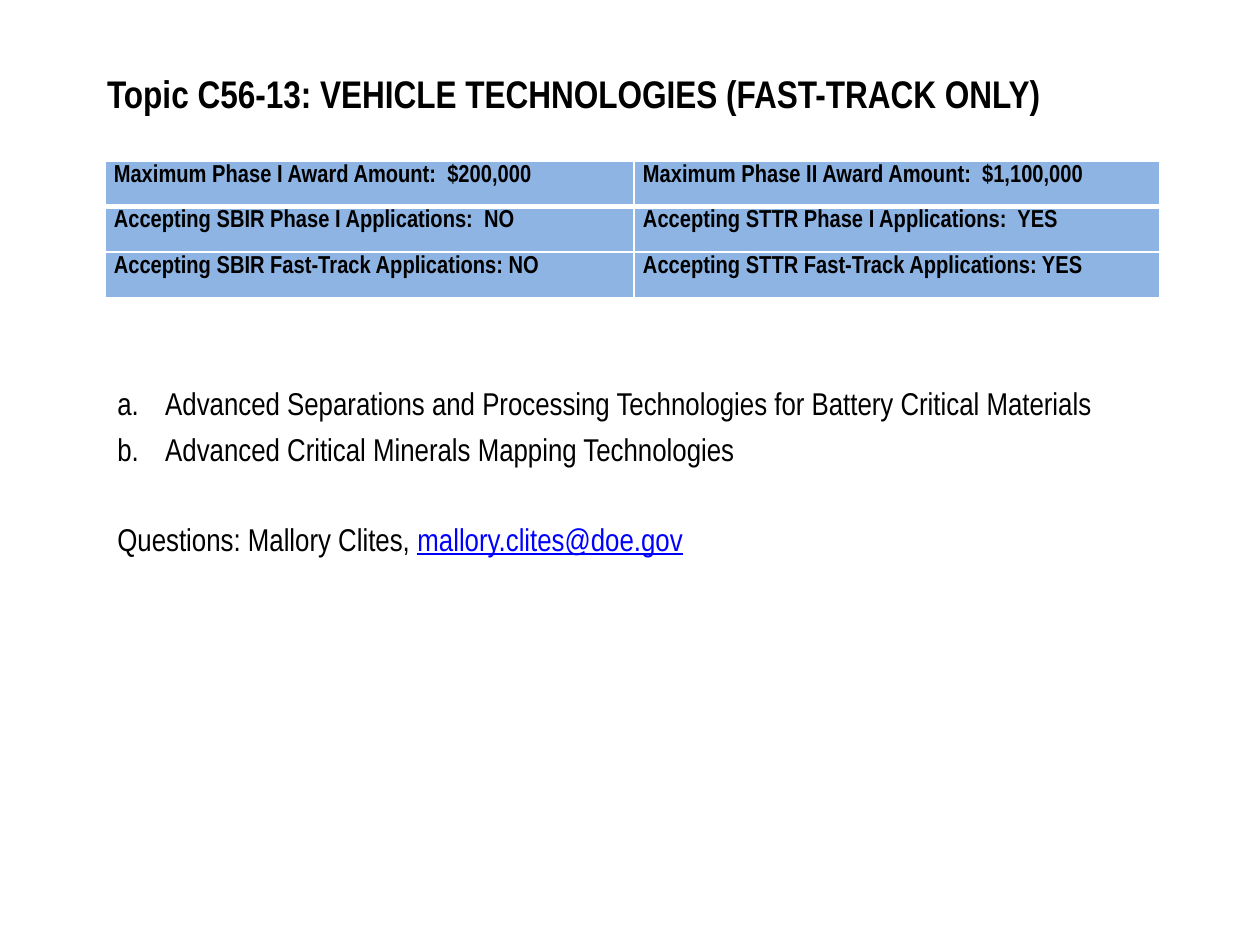
import pptx
import pptx.util
import pptx.dml.color
import pptx.enum.text
import pptx.oxml
import pptx.oxml.ns

HUES = {"text": "000000", "cell": "8EB4E3", "rule": "FFFFFF", "mail": "0000FF"}
FACE = "Arial Narrow"
WIDE, HIGH = 10, 7.5
INCH, PT = pptx.util.Inches, pptx.util.Pt

AWARDS = [
    ["Maximum Phase I Award Amount:  $200,000",
     "Maximum Phase II Award Amount:  $1,100,000"],
    ["Accepting SBIR Phase I Applications:  NO",
     "Accepting STTR Phase I Applications:  YES"],
    ["Accepting SBIR Fast-Track Applications: NO",
     "Accepting STTR Fast-Track Applications: YES"],
]
TOPICS = [
    "Advanced Separations and Processing Technologies for Battery Critical Materials",
    "Advanced Critical Minerals Mapping Technologies",
]


def hue(name):
    return pptx.dml.color.RGBColor.from_string(HUES[name])


def style(para, size, bold=False):
    font = para.font
    font.name, font.size, font.bold = FACE, PT(size), bold
    font.color.rgb = hue("text")
    para.alignment = pptx.enum.text.PP_ALIGN.LEFT


def place(shape, box):
    shape.left, shape.top, shape.width, shape.height = map(INCH, box)


def add_title(slide, box):
    title = slide.shapes.title
    place(title, box)
    frame = title.text_frame
    frame.text = "Topic C56-13: VEHICLE TECHNOLOGIES (FAST-TRACK ONLY)"
    frame.vertical_anchor = pptx.enum.text.MSO_ANCHOR.MIDDLE
    style(frame.paragraphs[0], 22, True)


def edge(cell, side, width):
    props = cell._tc.get_or_add_tcPr()
    props.append(pptx.oxml.parse_xml(
        f'<a:ln{side} {pptx.oxml.ns.nsdecls("a")} w="{PT(width)}"><a:solidFill>'
        f'<a:srgbClr val="{HUES["rule"]}"/></a:solidFill></a:ln{side}>'))


def add_awards(slide, box):
    rows, cols = len(AWARDS), len(AWARDS[0])
    table = slide.shapes.add_table(rows, cols, *map(INCH, box)).table
    first = 4.2
    for col, width in zip(table.columns, (first, box[2] - first)):
        col.width = INCH(width)
    for r, line in enumerate(AWARDS):
        table.rows[r].height = INCH(box[3] / rows)
        for c, words in enumerate(line):
            cell = table.cell(r, c)
            cell.margin_left = cell.margin_right = INCH(0.07)
            cell.margin_top = cell.margin_bottom = 0
            # A thick rule parts the first row from the rest
            for side in "LRTB":
                thick = (r, side) in ((0, "B"), (1, "T"))
                edge(cell, side, 3 if thick else 1)
            cell.fill.solid()
            cell.fill.fore_color.rgb = hue("cell")
            cell.text = words
            para = cell.text_frame.paragraphs[0]
            style(para, 14, True)
            para.line_spacing = 1.15


def letter(para, indent):
    props = para._p.get_or_add_pPr()
    props.set("marL", str(INCH(indent)))
    props.set("indent", str(-INCH(indent)))
    props.append(pptx.oxml.parse_xml(
        f'<a:buAutoNum {pptx.oxml.ns.nsdecls("a")} type="alphaLcPeriod"/>'))


def add_topics(slide, box):
    frame = slide.shapes.add_textbox(*map(INCH, box)).text_frame
    frame.word_wrap = True
    # Lettered topics
    frame.text = "\n".join(TOPICS)
    for para in frame.paragraphs:
        style(para, 18)
        para.space_before = PT(4.5)
        letter(para, 0.38)
    # Contact line
    para = frame.add_paragraph()
    style(para, 18)
    para.space_before = PT(30)
    para.add_run().text = "Questions: Mallory Clites, "
    mail = para.add_run()
    mail.text = "mallory.clites@doe.gov"
    mail.font.color.rgb = hue("mail")
    mail.font.underline = True


def main():
    deck = pptx.Presentation()
    deck.slide_width, deck.slide_height = INCH(WIDE), INCH(HIGH)
    slide = deck.slides.add_slide(deck.slide_layouts[5])
    left = WIDE / 12
    add_title(slide, (0.075 * WIDE, 0.28, 0.892 * WIDE, 0.92))
    add_awards(slide, (left, 1.28, 0.837 * WIDE, 1.08))
    add_topics(slide, (left, 0.4 * HIGH, 0.867 * WIDE, 1.92))
    deck.save("out.pptx")


if __name__ == "__main__":
    main()
